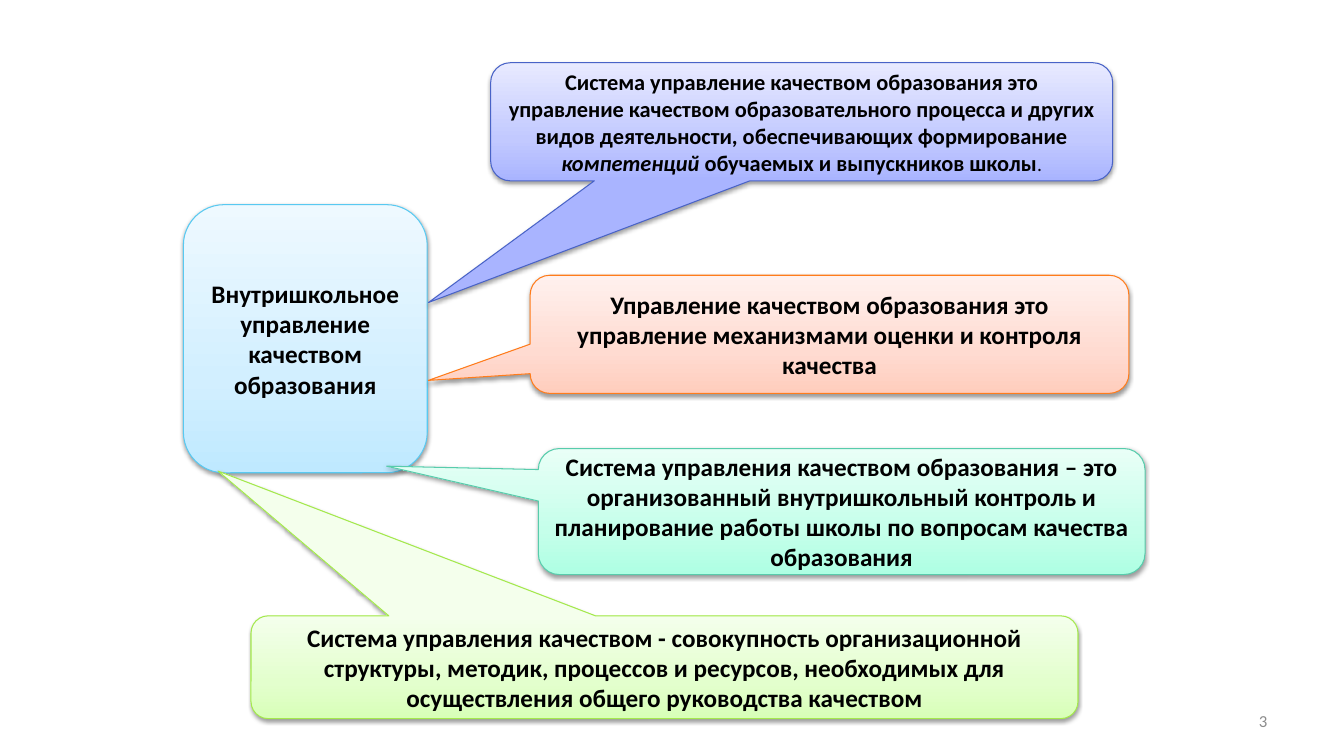
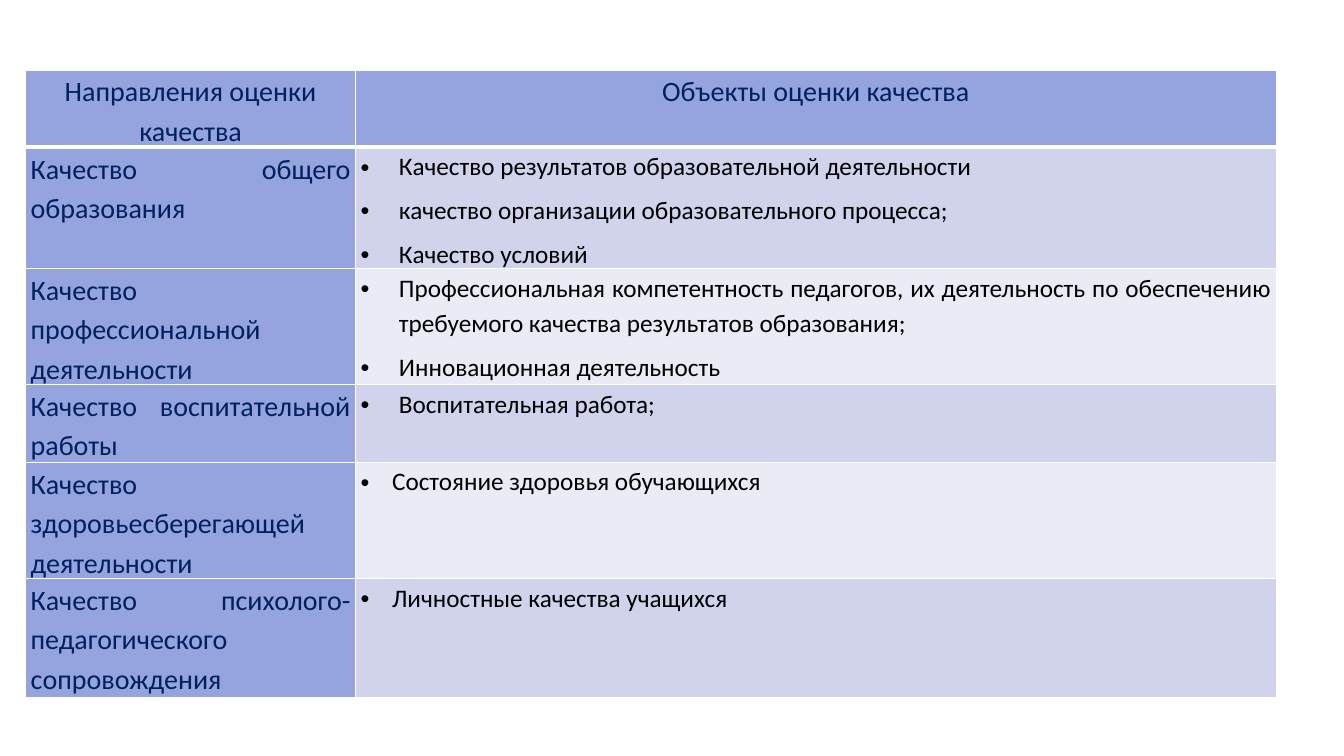
from copy import deepcopy

from pptx import Presentation
from pptx.dml.color import RGBColor
from pptx.enum.shapes import MSO_SHAPE
from pptx.enum.text import MSO_ANCHOR, PP_ALIGN
from pptx.oxml import parse_xml
from pptx.oxml.ns import nsdecls, qn
from pptx.util import Pt

ROUNDED = MSO_SHAPE.ROUNDED_RECTANGLE
CALLOUT = MSO_SHAPE.ROUNDED_RECTANGULAR_CALLOUT
MIDDLE = MSO_ANCHOR.MIDDLE
LEFT, CENTER, RIGHT, JUSTIFY = PP_ALIGN.LEFT, PP_ALIGN.CENTER, PP_ALIGN.RIGHT, PP_ALIGN.JUSTIFY

HUB = (
    (131, 146.2, 174.2, 191.5), ("BFE9FF", "D2EFFF", "EEF9FF"), "58C9F1",
    [("Внутришкольное управление качеством образования", {})],
)
DEFINITIONS = [
    ((350.5, 44.8, 444.3, 84.4), (-0.6, 1.53),
     ("A9B4FF", "C2C9FF", "E8EAFF"), "4963C7",
     [("Система управление качеством образования это управление качеством образовательного "
       "процесса и других видов деятельности, обеспечивающих формирование ", {"size": 16}),
      ("компетенций", {"size": 16, "italic": True}),
      (" обучаемых и выпускников школы", {"size": 16}),
      (".", {"size": 14, "bold": False})]),
    ((378.7, 196.6, 427.7, 84.4), (-0.67, 0.39),
     ("FFCDBD", "FFDBD1", "FFF1EE"), "FF7C1B",
     [("Управление качеством образования это управление механизмами оценки "
       "и контроля качества", {})]),
    ((384.5, 320.4, 433.4, 90), (-0.75, -0.36),
     ("AEFFE3", "C5FFEA", "E9FFF7"), "58CCAC",
     [("Система управления качеством образования – это организованный внутришкольный "
       "контроль и планирование работы школы по вопросам качества образования", {})]),
    ((179.3, 439.9, 590.7, 73.4), (-0.54, -1.91),
     ("D8FFB8", "E3FFCD", "F4FFEC"), "A4E94C",
     [("Система управления качеством - совокупность организационной структуры, методик, "
       "процессов и ресурсов, необходимых для осуществления общего руководства качеством", {})]),
]

HEADINGS = ("Направления оценки качества", "Объекты оценки качества")
DIRECTIONS = [
    ("Качество общего образования", 86.5, LEFT, 27.4,
     ["Качество результатов образовательной деятельности",
      "качество организации образовательного процесса;",
      "Качество условий"]),
    ("Качество профессиональной деятельности", 83, JUSTIFY, 27.4,
     ["Профессиональная компетентность педагогов, их деятельность по обеспечению "
      "требуемого качества результатов образования;",
      "Инновационная деятельность"]),
    ("Качество воспитательной работы", 55.5, JUSTIFY, 27.4, ["Воспитательная работа;"]),
    ("Качество здоровьесберегающей деятельности", 83, JUSTIFY, 22.5,
     ["Состояние здоровья обучающихся"]),
    ("Качество психолого-педагогического сопровождения", 85, JUSTIFY, 22.5,
     ["Личностные качества учащихся"]),
]
HEADING_HEIGHT = 55
COLUMN_WIDTHS = (235.7, 657.6)


def rgb(value):
    """Turn a hex string into a colour."""
    return RGBColor.from_string(value)


class Deck:
    """Hold the style, the presentation and the current slide."""

    FONT = "Calibri"
    INK, NAVY, GREY = "000000", "002060", "8C8C8C"
    ACCENT, BANDS, RULE = "95A4DE", ("D0D3EB", "E9EBF5"), "FFFFFF"

    def __init__(self):
        """Start a wide presentation."""
        self.presentation = Presentation()
        self.presentation.slide_width = Pt(960)
        self.presentation.slide_height = Pt(540)
        self.slide = None

    def new_slide(self):
        """Add a blank slide and make it current."""
        self.slide = self.presentation.slides.add_slide(self.presentation.slide_layouts[6])

    def run(self, paragraph, text, size=18, color=INK, bold=False, italic=False):
        """Add one styled run."""
        run = paragraph.add_run()
        run.text = text
        font = run.font
        font.name, font.size, font.bold, font.italic = self.FONT, Pt(size), bold, italic
        font.color.rgb = rgb(color)

    def page_number(self, number):
        """Add the page number at the lower right."""
        frame = self.slide.shapes.add_textbox(Pt(688.3), Pt(500.4), Pt(224), Pt(28.8)).text_frame
        frame.word_wrap = True
        frame.vertical_anchor = MIDDLE
        frame.paragraphs[0].alignment = RIGHT
        self.run(frame.paragraphs[0], number, 12, self.GREY)

    def bubble(self, kind, box, stops, outline, runs, tip=()):
        """Add a shaded shape with centred bold text."""
        bubble = self.slide.shapes.add_shape(kind, *map(Pt, box))
        for index, value in enumerate(tip):
            bubble.adjustments[index] = value
        self.shade(bubble, stops)
        bubble.line.color.rgb = rgb(outline)
        bubble.line.width = Pt(0.75)
        self.shadow(bubble)
        frame = bubble.text_frame
        frame.word_wrap = True
        frame.vertical_anchor = MIDDLE
        paragraph = frame.paragraphs[0]
        paragraph.alignment = CENTER
        for text, style in runs:
            self.run(paragraph, text, **{"bold": True, **style})

    def shade(self, shape, stops):
        """Fill a shape with three colours rising from the bottom."""
        fill = shape.fill
        fill.gradient()
        fill.gradient_angle = 90
        stop_list = shape.element.spPr.find(qn("a:gradFill")).find(qn("a:gsLst"))
        stop_list.append(deepcopy(stop_list[-1]))
        for stop, color, position in zip(fill.gradient_stops, stops, (0, 0.35, 1)):
            stop.color.rgb = rgb(color)
            stop.position = position

    def shadow(self, shape):
        """Give a shape a soft shadow below."""
        shape.shadow.inherit = False
        shape.element.spPr.find(qn("a:effectLst")).append(parse_xml(
            f'<a:outerShdw {nsdecls("a")} blurRad="{Pt(3.1)}" dist="{Pt(1.6)}" dir="5400000" '
            f'rotWithShape="0"><a:srgbClr val="{self.INK}"><a:alpha val="38000"/></a:srgbClr>'
            '</a:outerShdw>'))

    def table(self, left, top, widths, heights):
        """Add a plain table and return it."""
        table = self.slide.shapes.add_table(
            len(heights), len(widths), Pt(left), Pt(top), Pt(sum(widths)), Pt(sum(heights))).table
        table.first_row = table.horz_banding = False
        for column, width in zip(table.columns, widths):
            column.width = Pt(width)
        for row, height in zip(table.rows, heights):
            row.height = Pt(height)
        return table

    def cell(self, cell, texts, fill, size, color, align, indent=0, top=1, bottom=1):
        """Fill one table cell, with bullets if an indent is given."""
        cell.fill.solid()
        cell.fill.fore_color.rgb = rgb(fill)
        cell.margin_left = cell.margin_right = Pt(3.6)
        cell.margin_top = cell.margin_bottom = 0
        properties = cell._tc.get_or_add_tcPr()
        for index, (side, width) in enumerate(zip("LRTB", (1, 1, top, bottom))):
            properties.insert(index, parse_xml(
                f'<a:ln{side} {nsdecls("a")} w="{Pt(width)}"><a:solidFill>'
                f'<a:srgbClr val="{self.RULE}"/></a:solidFill></a:ln{side}>'))
        frame = cell.text_frame
        for index, text in enumerate(texts):
            paragraph = frame.add_paragraph() if index else frame.paragraphs[0]
            paragraph.alignment = align
            paragraph.line_spacing = 1.15
            paragraph.space_before = Pt(6 if index else 0)
            if indent:
                self.bullet(paragraph, indent)
            self.run(paragraph, text, size, color)

    def bullet(self, paragraph, indent):
        """Give a paragraph a hanging bullet."""
        properties = paragraph._p.get_or_add_pPr()
        properties.set("marL", str(Pt(indent)))
        properties.set("indent", str(-Pt(indent)))
        properties.append(parse_xml(f'<a:buFont {nsdecls("a")} typeface="Arial"/>'))
        properties.append(parse_xml(f'<a:buChar {nsdecls("a")} char="•"/>'))


def definitions_slide(deck):
    """Build the slide of definitions around the central notion."""
    deck.new_slide()
    deck.page_number("3")
    deck.bubble(ROUNDED, *HUB)
    for box, tip, stops, outline, runs in DEFINITIONS:
        deck.bubble(CALLOUT, box, stops, outline, runs, tip)


def directions_slide(deck):
    """Build the table of assessment directions and objects."""
    deck.new_slide()
    heights = [HEADING_HEIGHT] + [direction[1] for direction in DIRECTIONS]
    table = deck.table(18.3, 50, COLUMN_WIDTHS, heights)
    for column, heading in enumerate(HEADINGS):
        deck.cell(table.cell(0, column), [heading], deck.ACCENT, 20, deck.NAVY, CENTER, bottom=3)
    for row, (direction, _, align, indent, objects) in enumerate(DIRECTIONS, 1):
        top = 3 if row == 1 else 1
        deck.cell(table.cell(row, 0), [direction], deck.ACCENT, 20, deck.NAVY, JUSTIFY, top=top)
        deck.cell(table.cell(row, 1), objects, deck.BANDS[(row - 1) % 2], 18, deck.INK,
                  align, indent, top=top)


def main():
    """Build and save the presentation."""
    deck = Deck()
    definitions_slide(deck)
    directions_slide(deck)
    deck.presentation.save("out.pptx")


if __name__ == "__main__":
    main()
